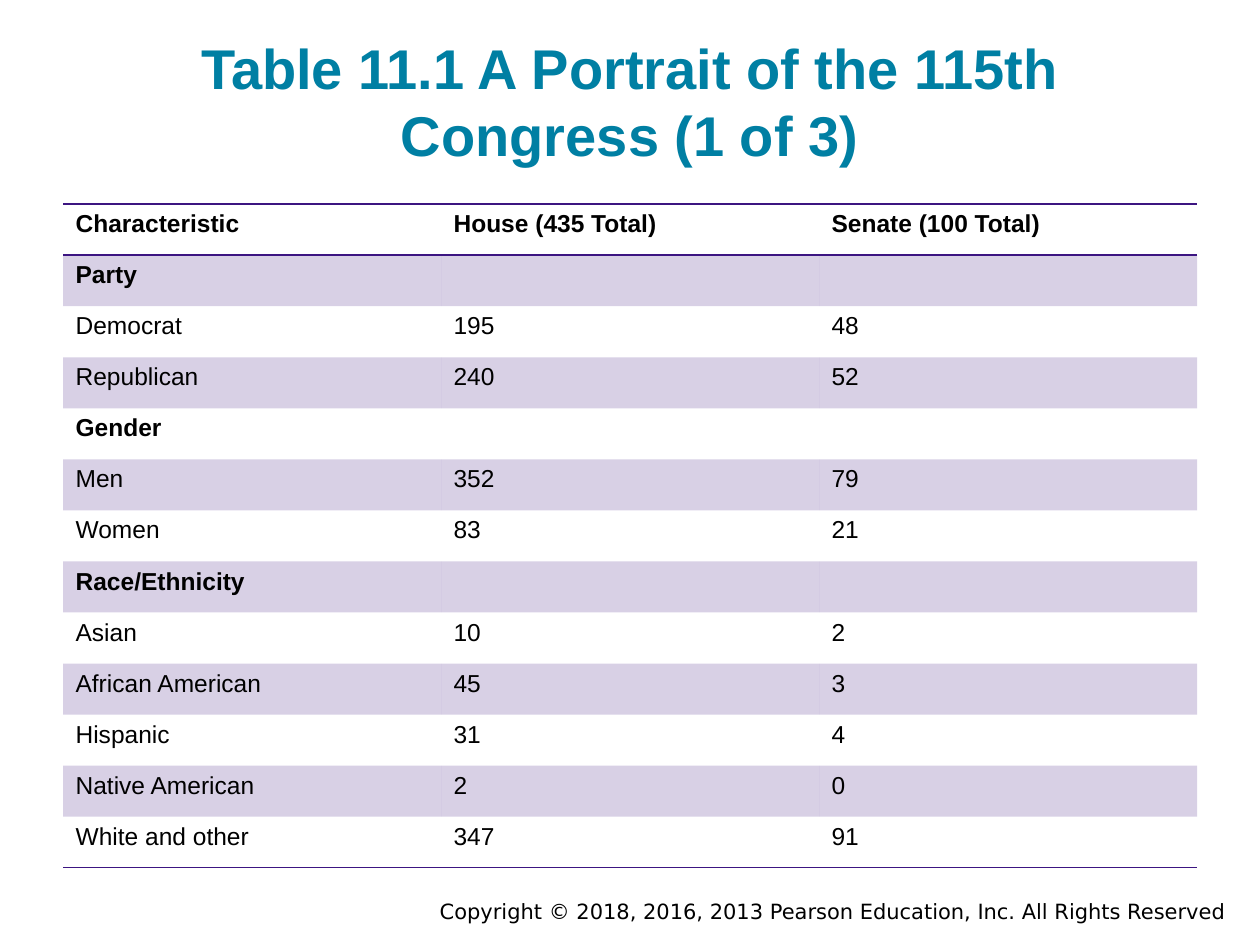
from lxml.etree import SubElement
from pptx import Presentation
from pptx.dml.color import RGBColor
from pptx.enum.text import MSO_ANCHOR as Anchor, PP_ALIGN as Align
from pptx.oxml.ns import qn
from pptx.util import Inches, Pt

PURPLE = "3C1581"
PLAIN = "{2D5ABB26-0587-4C30-8999-92F81FD0307C}"  # no style, no grid
ROWS = [
    ("Characteristic", "House (435 Total)", "Senate (100 Total)"),
    ("Party", "", ""),
    ("Democrat", "195", "48"),
    ("Republican", "240", "52"),
    ("Gender", "", ""),
    ("Men", "352", "79"),
    ("Women", "83", "21"),
    ("Race/Ethnicity", "", ""),
    ("Asian", "10", "2"),
    ("African American", "45", "3"),
    ("Hispanic", "31", "4"),
    ("Native American", "2", "0"),
    ("White and other", "347", "91"),
]


def color(text):
    return RGBColor.from_string(text)


def style(para, size, face="Arial", tint="000000", bold=False):
    font = para.font
    font.size, font.name, font.bold = Pt(size), face, bold
    font.color.rgb = color(tint)


def add_text(slide, box, text, align, anchor, pad, **look):
    frame = slide.shapes.add_textbox(*map(Inches, box)).text_frame
    frame.word_wrap = True
    frame.vertical_anchor = anchor
    frame.margin_top = frame.margin_bottom = Inches(pad)
    para = frame.paragraphs[0]
    para.text = text
    para.alignment = align
    style(para, **look)


def add_rule(cell, side):
    """Draw a cell border; side is lnT or lnB, top first."""
    line = SubElement(cell._tc.get_or_add_tcPr(), qn("a:" + side), w=str(Pt(1)))
    fill = SubElement(line, qn("a:solidFill"))
    SubElement(fill, qn("a:srgbClr"), val=PURPLE)


def shade(cell):
    cell.fill.solid()
    cell.fill.fore_color.rgb = color(PURPLE)
    tint = cell._tc.tcPr.find(qn("a:solidFill")).find(qn("a:srgbClr"))
    SubElement(tint, qn("a:alpha"), val="20000")


def add_grid(slide, box, rows):
    frame = slide.shapes.add_table(len(rows), len(rows[0]), *map(Inches, box))
    table = frame.table
    table.first_row = table.horz_banding = False
    table._tbl.tblPr.find(qn("a:tableStyleId")).text = PLAIN
    for r, row in enumerate(rows):
        table.rows[r].height = Inches(box[3] / len(rows))
        for c, text in enumerate(row):
            cell = table.cell(r, c)
            if r == 0:
                add_rule(cell, "lnT")
            if r in (0, len(rows) - 1):
                add_rule(cell, "lnB")
            if r % 2:
                shade(cell)
            else:
                cell.fill.background()
            cell.text = text
            style(cell.text_frame.paragraphs[0], 14, bold=r == 0 or not row[1])


def main():
    deck = Presentation()
    deck.slide_width, deck.slide_height = Inches(10), Inches(7.5)
    slide = deck.slides.add_slide(deck.slide_layouts[6])
    add_text(slide, (2, 7.08, 7.83, 0.3),
             "Copyright © 2018, 2016, 2013 Pearson Education, Inc. All Rights Reserved",
             Align.RIGHT, Anchor.TOP, 0.05, size=12, face="DejaVu Sans")
    add_text(slide, (0.5, 0.24, 9, 1.19),
             "Table 11.1 A Portrait of the 115th Congress (1 of 3)",
             Align.CENTER, Anchor.BOTTOM, 0.1, size=32, tint="007FA3", bold=True)
    add_grid(slide, (0.5, 1.62, 9, 5.27), ROWS)
    deck.save("out.pptx")


if __name__ == "__main__":
    main()
